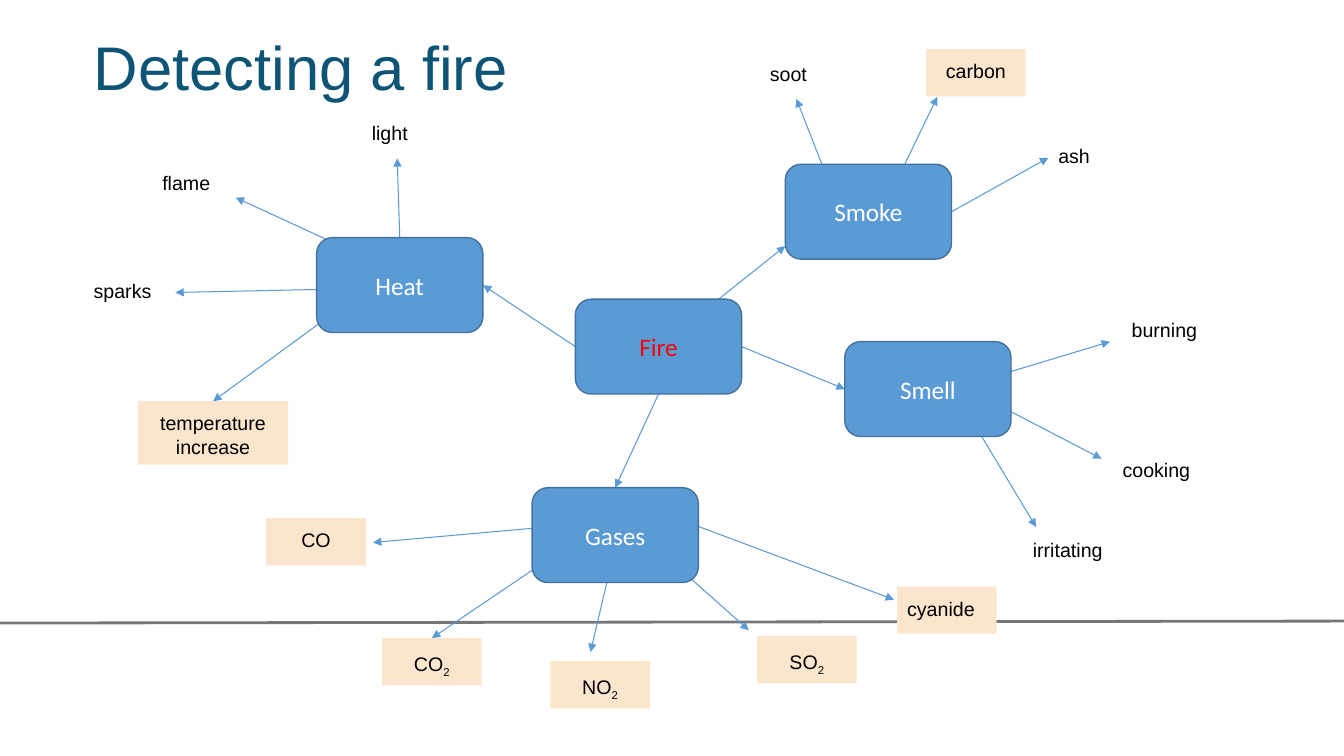
"""Build the "Detecting a fire" mind map slide."""
from dataclasses import dataclass
from typing import Any, NamedTuple, Optional, Union

from lxml import etree
from pptx import Presentation
from pptx.dml.color import RGBColor
from pptx.enum.shapes import MSO_CONNECTOR, MSO_SHAPE
from pptx.enum.text import MSO_ANCHOR, MSO_AUTO_SIZE, PP_ALIGN
from pptx.oxml.ns import qn
from pptx.util import Cm, Pt

STRAIGHT = MSO_CONNECTOR.STRAIGHT
RECTANGLE, ROUNDED = MSO_SHAPE.RECTANGLE, MSO_SHAPE.ROUNDED_RECTANGLE
TOP, MIDDLE = MSO_ANCHOR.TOP, MSO_ANCHOR.MIDDLE
LEFT, CENTER = PP_ALIGN.LEFT, PP_ALIGN.CENTER
NO_FIT = MSO_AUTO_SIZE.NONE
UPPER, LEFT_SIDE, LOWER, RIGHT_SIDE = range(4)
TITLE_ONLY = 5


@dataclass(frozen=True)
class Theme:
    title: RGBColor = RGBColor(0x0E, 0x54, 0x75)
    node: RGBColor = RGBColor(0x5B, 0x9B, 0xD5)
    node_border: RGBColor = RGBColor(0x42, 0x71, 0x9B)
    highlight: RGBColor = RGBColor(0xFC, 0xE5, 0xCD)
    rule: RGBColor = RGBColor(0x74, 0x76, 0x78)
    white: RGBColor = RGBColor(0xFF, 0xFF, 0xFF)
    black: RGBColor = RGBColor(0, 0, 0)
    red: RGBColor = RGBColor(0xFF, 0, 0)
    title_size: float = 44
    node_size: float = 18
    label_size: float = 14
    title_font: str = "Arial"
    node_font: str = "Calibri"
    arrow_width: float = 0.75


THEME = Theme()


@dataclass(frozen=True)
class Node:
    name: str
    left: float
    top: float
    color: RGBColor = THEME.white
    width: float = 4.19
    height: float = 2.39


@dataclass(frozen=True)
class Label:
    text: str
    left: float
    top: float
    boxed: bool = False
    align: Any = LEFT
    subscript: str = ""
    width: float = 2.51
    height: float = 1.19


class Point(NamedTuple):
    x: float
    y: float


class Joint(NamedTuple):
    name: str
    side: int


class Arrow(NamedTuple):
    start: Union[Point, Joint]
    end: Union[Point, Joint]


NODES = [
    Node("Fire", 14.5, 7.54, THEME.red),
    Node("Smell", 21.29, 8.61),
    Node("Smoke", 19.79, 4.14),
    Node("Heat", 7.98, 5.99),
    Node("Gases", 13.41, 12.29),
]
LABELS = [
    Label("soot", 19.15, 1.3),
    Label("carbon", 23.34, 1.24, True, CENTER),
    Label("ash", 26.42, 3.38),
    Label("burning", 28.27, 7.75),
    Label("cooking", 28.04, 11.3),
    Label("irritating", 25.78, 13.31),
    Label("light", 9.12, 2.79),
    Label("flame", 3.84, 4.06),
    Label("sparks", 2.11, 6.78),
    Label("temperature increase", 3.48, 10.11, True, CENTER, width=3.78, height=1.6),
    Label("CO", 6.71, 13.06, True, CENTER),
    Label("CO", 9.63, 16.08, True, CENTER, "2"),
    Label("NO", 13.87, 16.66, True, CENTER, "2"),
    Label("SO", 19.08, 16.03, True, CENTER, "2"),
    Label("cyanide", 22.61, 14.78, True),
]
ARROWS = [
    Arrow(Joint("Fire", RIGHT_SIDE), Joint("Smell", LEFT_SIDE)),
    Arrow(Joint("Fire", LOWER), Joint("Gases", UPPER)),
    Arrow(Joint("Fire", LEFT_SIDE), Joint("Heat", RIGHT_SIDE)),
    Arrow(Point(17.78, 7.8), Point(19.79, 6.2)),
    Arrow(Point(20.88, 4.57), Point(20.07, 2.49)),
    Arrow(Point(22.58, 4.6), Point(23.62, 2.44)),
    Arrow(Joint("Smoke", RIGHT_SIDE), Joint("ash", LEFT_SIDE)),
    Arrow(Point(25.45, 9.37), Point(27.97, 8.61)),
    Arrow(Point(25.45, 10.36), Point(27.76, 11.56)),
    Arrow(Point(24.74, 11), Point(26.11, 13.28)),
    Arrow(Joint("Heat", UPPER), Point(10.01, 3.99)),
    Arrow(Point(8.59, 6.2), Point(5.94, 4.98)),
    Arrow(Point(8.2, 7.29), Point(4.42, 7.37)),
    Arrow(Point(8.36, 7.92), Joint("temperature increase", UPPER)),
    Arrow(Point(13.77, 13.28), Point(9.4, 13.67)),
    Arrow(Point(13.59, 14.25), Joint("CO2", UPPER)),
    Arrow(Point(15.37, 14.35), Point(14.88, 16.43)),
    Arrow(Point(17.32, 14.5), Point(18.87, 15.88)),
    Arrow(Point(17.45, 13.21), Point(22.53, 15.11)),
]


def apply(target: Any, values: dict[str, Any]) -> None:
    for name, value in values.items():
        setattr(target, name, value)


def write(shape: Any, texts: list[str], font: str, size: float, color: RGBColor,
          align: Any, anchor: Any, inset: float, spacing: float = 1.0) -> None:
    frame = shape.text_frame
    apply(frame, {"word_wrap": True, "auto_size": NO_FIT, "vertical_anchor": anchor,
                  "margin_left": Cm(0.25), "margin_right": Cm(0.25),
                  "margin_top": Cm(inset), "margin_bottom": Cm(inset)})
    paragraph = frame.paragraphs[0]
    apply(paragraph, {"alignment": align, "line_spacing": spacing})
    for text in texts:
        run = paragraph.add_run()
        run.text = text
        apply(run.font, {"name": font, "size": Pt(size), "bold": False})
        run.font.color.rgb = color


def add_block(slide: Any, item: Union[Node, Label], kind: Any, fill: RGBColor,
              border: Optional[RGBColor] = None) -> Any:
    shape = slide.shapes.add_shape(kind, Cm(item.left), Cm(item.top),
                                   Cm(item.width), Cm(item.height))
    shape.shadow.inherit = False
    shape.fill.solid()
    shape.fill.fore_color.rgb = fill
    if border is None:
        shape.line.fill.background()
    else:
        shape.line.color.rgb = border
        shape.line.width = Pt(1)
    return shape


def add_node(slide: Any, node: Node) -> Any:
    shape = add_block(slide, node, ROUNDED, THEME.node, THEME.node_border)
    write(shape, [node.name], THEME.node_font, THEME.node_size, node.color,
          CENTER, MIDDLE, 0.13)
    return shape


def add_label(slide: Any, label: Label) -> Any:
    if label.boxed:
        shape = add_block(slide, label, RECTANGLE, THEME.highlight)
    else:
        shape = slide.shapes.add_textbox(Cm(label.left), Cm(label.top),
                                         Cm(label.width), Cm(label.height))
    texts = [text for text in (label.text, label.subscript) if text]
    write(shape, texts, THEME.title_font, THEME.label_size, THEME.black, label.align,
          TOP, 0.25, 1.15 if label.subscript else 1.0)
    if label.subscript:
        list(shape.element.iter(qn("a:rPr")))[-1].set("baseline", "-25000")
    return shape


def add_line(slide: Any, start: Point, end: Point, color: RGBColor, width: float) -> Any:
    connector = slide.shapes.add_connector(STRAIGHT, Cm(start.x), Cm(start.y),
                                           Cm(end.x), Cm(end.y))
    connector.line.color.rgb = color
    connector.line.width = Pt(width)
    etree.SubElement(connector.element.spPr, qn("a:effectLst"))
    return connector


def add_arrow(slide: Any, arrow: Arrow, shapes: dict[str, Any]) -> Any:
    start, end = (Point(0, 0) if isinstance(tip, Joint) else tip for tip in arrow)
    connector = add_line(slide, start, end, THEME.node, THEME.arrow_width)
    for tip, connect in zip(arrow, (connector.begin_connect, connector.end_connect)):
        if isinstance(tip, Joint):
            connect(shapes[tip.name], tip.side)
    outline = connector.element.spPr.find(qn("a:ln"))
    etree.SubElement(outline, qn("a:tailEnd"), type="triangle")
    return connector


def main() -> None:
    presentation = Presentation()
    apply(presentation, {"slide_width": Cm(33.87), "slide_height": Cm(19.05)})
    slide = presentation.slides.add_slide(presentation.slide_layouts[TITLE_ONLY])
    title = slide.shapes.title
    apply(title, {"left": Cm(2.11), "top": Cm(-0.05), "width": Cm(29.21), "height": Cm(3.68)})
    write(title, ["Detecting a fire"], THEME.title_font, THEME.title_size, THEME.title,
          LEFT, MIDDLE, 0.13, 0.9)
    add_line(slide, Point(0, 15.7), Point(33.87, 15.65), THEME.rule, 2)
    shapes = {node.name: add_node(slide, node) for node in NODES}
    shapes |= {label.text + label.subscript: add_label(slide, label) for label in LABELS}
    for arrow in ARROWS:
        connector = add_arrow(slide, arrow, shapes)
        shapes["Fire"].element.addprevious(connector.element)
    presentation.save("out.pptx")


if __name__ == "__main__":
    main()
